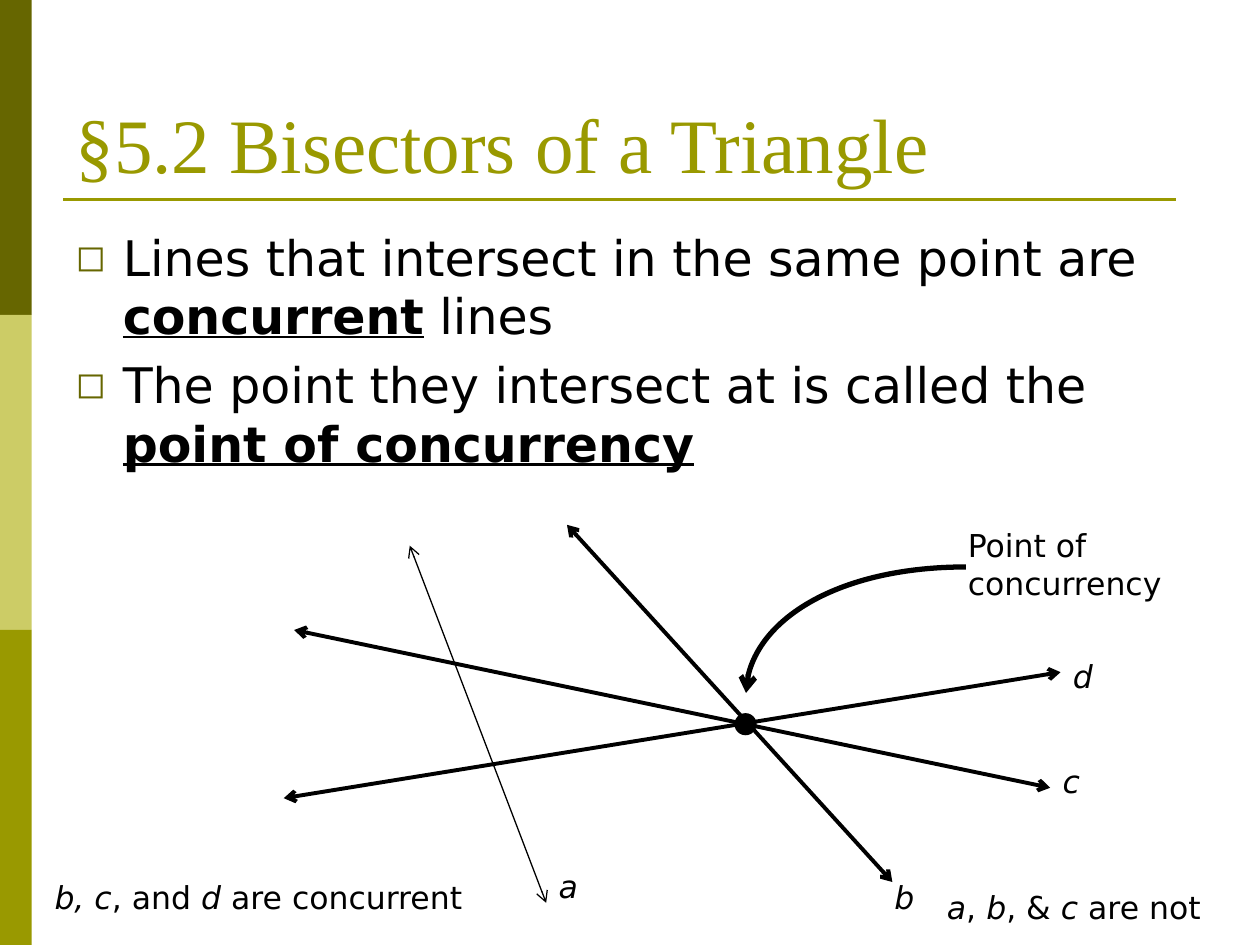
from lxml.etree import SubElement
from pptx import Presentation
from pptx.dml.color import RGBColor
from pptx.enum.shapes import MSO_CONNECTOR, MSO_SHAPE
from pptx.enum.text import MSO_ANCHOR, MSO_AUTO_SIZE, PP_ALIGN
from pptx.oxml.ns import qn
from pptx.util import Cm, Pt

THEME = {
    "dark": "666600", "pale": "CCCC66", "olive": "999900", "ink": "000000",
    "serif": "Times New Roman", "sans": "DejaVu Sans",
    "title": 44, "body": 28, "label": 18,
}

# Content: runs are (text, style) with b = bold, u = underline, i = italic
TITLE = "§5.2 Bisectors of a Triangle"
POINTS = [
    [("Lines that intersect in the same point are ", ""),
     ("concurrent", "bu"), (" lines", "")],
    [("The point they intersect at is called the ", ""),
     ("point of concurrency", "bu")],
]
# Labels: left, top, width, height in cm, then runs
LABELS = [
    (21.17, 15.24, 1.69, 1.02, [("c", "i")]),
    (17.78, 17.57, 1.69, 1.02, [("b", "i")]),
    (11.01, 17.36, 1.69, 1.02, [("a", "i")]),
    (21.38, 13.12, 1.69, 1.02, [("d", "i")]),
    (19.26, 10.48, 5.29, 1.78, [("Point of concurrency", "")]),
    (0.85, 17.57, 10.16, 1.02,
     [("b, c", "i"), (", and ", ""), ("d", "i"), (" are concurrent", "")]),
    (18.84, 17.78, 6.56, 1.02,
     [("a", "i"), (", ", ""), ("b", "i"), (", & ", ""), ("c", "i"),
      (" are not", "")]),
]
# Lines: from x, y, to x, y in cm, then width in points
LINES = [
    (5.93, 12.7, 21.17, 15.88, 2.25),
    (5.72, 16.09, 21.38, 13.55, 2.25),
    (11.43, 10.58, 17.99, 17.78, 2.25),
    (8.26, 11, 11.01, 18.2, 0.75),
]
DOT = (14.82, 14.39, 0.42)
CURVE = [(19.47, 11.43), (17.02, 11.43), (15.04, 12.57), (15.04, 13.97)]


def rgb(name):
    return RGBColor.from_string(THEME[name])


def place(item, *box):
    item.left, item.top, item.width, item.height = map(Cm, box)


def style(run, face, size, color, marks=""):
    font = run.font
    font.name, font.size = THEME[face], Pt(THEME[size])
    font.color.rgb = rgb(color)
    font.bold, font.italic = "b" in marks, "i" in marks
    font.underline = "u" in marks


def write(para, runs, size):
    for text, marks in runs:
        run = para.add_run()
        run.text = text
        style(run, "sans", size, "ink", marks)


def bullet(para):
    props = para._p.get_or_add_pPr()
    color = SubElement(props, qn("a:buClr"))
    SubElement(color, qn("a:srgbClr"), val=THEME["dark"])
    SubElement(props, qn("a:buSzPct"), val="75000")
    SubElement(props, qn("a:buFont"), typeface=THEME["sans"])
    SubElement(props, qn("a:buChar"), char="◻")


def solid(shapes, kind, box, color):
    shape = shapes.add_shape(kind, *map(Cm, box))
    shape.shadow.inherit = False
    shape.fill.solid()
    shape.fill.fore_color.rgb = rgb(color)
    shape.line.fill.background()
    return shape


def stroke(item, color, width, ends=()):
    item.line.color.rgb = rgb(color)
    item.line.width = Pt(width)
    for end in ends:
        SubElement(item.line._get_or_add_ln(), qn("a:" + end), type="arrow")


def rule(shapes, ends, color, width, heads=()):
    line = shapes.add_connector(MSO_CONNECTOR.STRAIGHT, *map(Cm, ends))
    stroke(line, color, width, heads)
    SubElement(line._element.spPr, qn("a:effectLst"))


def bend(shapes, points):
    """Draw one Bezier arrow from four control points."""
    spots = [(Cm(x), Cm(y)) for x, y in points]
    maker = shapes.build_freeform(*spots[0])
    maker.add_line_segments(spots[-1:], close=False)
    shape = maker.convert_to_shape()
    shape.shadow.inherit = False
    shape.fill.background()
    stroke(shape, "ink", 3, ["tailEnd"])
    step = next(shape._element.iter(qn("a:lnTo")))
    curve = SubElement(step.getparent(), qn("a:cubicBezTo"))
    for x, y in spots[1:]:
        SubElement(curve, qn("a:pt"),
                   x=str(x - shape.left), y=str(y - shape.top))
    step.getparent().remove(step)


def main():
    deck = Presentation()
    deck.slide_width, deck.slide_height = Cm(25.4), Cm(19.05)
    slide = deck.slides.add_slide(deck.slide_layouts[1])
    shapes = slide.shapes

    # Side bands and title rule
    for i, color in enumerate(("dark", "pale", "olive")):
        solid(shapes, MSO_SHAPE.RECTANGLE, (0, i * 6.35, 0.64, 6.35), color)
    rule(shapes, (1.27, 4.02, 23.71, 4.02), "olive", 1.5)

    # Title
    title = shapes.title
    place(title, 1.27, 0.76, 22.86, 3.18)
    frame = title.text_frame
    frame.text = TITLE
    frame.vertical_anchor = MSO_ANCHOR.BOTTOM
    frame.auto_size = MSO_AUTO_SIZE.NONE
    frame.paragraphs[0].alignment = PP_ALIGN.LEFT
    style(frame.paragraphs[0].runs[0], "serif", "title", "olive")

    # Bulleted list
    body = slide.placeholders[1]
    place(body, 1.27, 4.45, 22.86, 12.57)
    frame = body.text_frame
    frame.auto_size = MSO_AUTO_SIZE.NONE
    for i, runs in enumerate(POINTS):
        para = frame.add_paragraph() if i else frame.paragraphs[0]
        bullet(para)
        write(para, runs, "body")

    # Diagram
    for *ends, width in LINES:
        rule(shapes, ends, "ink", width, ["headEnd", "tailEnd"])
    x, y, size = DOT
    dot = solid(shapes, MSO_SHAPE.OVAL, (x, y, size, size), "ink")
    stroke(dot, "ink", 0.75)
    bend(shapes, CURVE)

    # Labels
    for *box, runs in LABELS:
        frame = shapes.add_textbox(*map(Cm, box)).text_frame
        frame.word_wrap = True
        frame.auto_size = MSO_AUTO_SIZE.SHAPE_TO_FIT_TEXT
        write(frame.paragraphs[0], runs, "label")

    deck.save("out.pptx")


if __name__ == "__main__":
    main()
